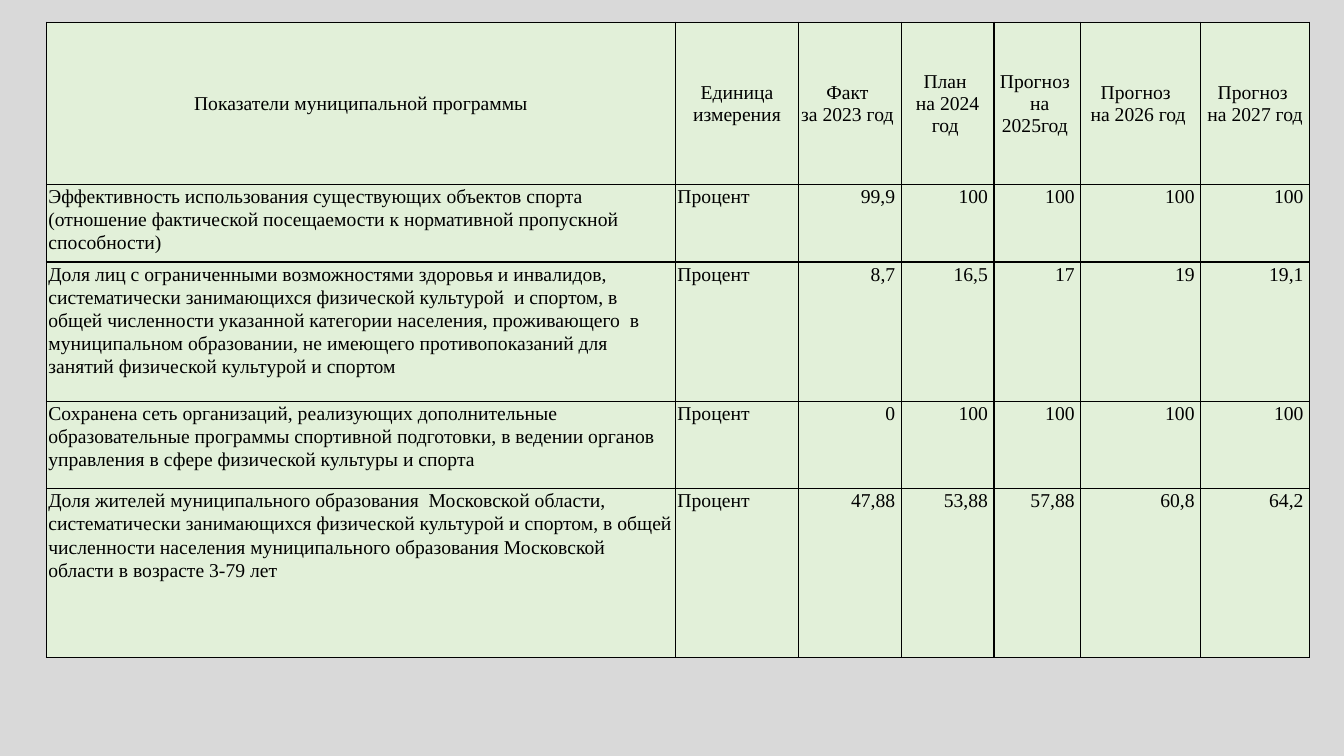
from lxml.etree import SubElement
from pptx import Presentation
from pptx.dml.color import RGBColor
from pptx.enum.text import MSO_ANCHOR, PP_ALIGN
from pptx.oxml.ns import qn
from pptx.util import Inches, Pt

FONT = "Times New Roman"
BACKGROUND, CELL_FILL, INK = "D9D9D9", "E2F0D9", "000000"
COLUMN_WIDTHS = [6.24, 1.22, 1.02, 0.92, 0.86, 1.19, 1.08]
ROW_HEIGHTS = [1.61, 0.77, 1.38, 0.87, 1.67]

HEADINGS = [
    "Показатели муниципальной программы",
    "Единица измерения",
    "Факт \nза 2023 год ",
    "План \nна 2024 год ",
    "Прогноз \n на 2025год ",
    "Прогноз  \nна 2026 год ",
    "Прогноз \n на 2027 год ",
]
INDICATORS = [
    ["Эффективность использования существующих объектов спорта (отношение "
     "фактической посещаемости к нормативной пропускной способности)",
     "Процент", "99,9", "100", "100", "100", "100"],
    ["Доля лиц с ограниченными возможностями здоровья и инвалидов, "
     "систематически занимающихся физической культурой  и спортом, в общей "
     "численности указанной категории населения, проживающего  в муниципальном "
     "образовании, не имеющего противопоказаний для занятий физической "
     "культурой и спортом",
     "Процент", "8,7", "16,5", "17", "19", "19,1"],
    ["Сохранена сеть организаций, реализующих дополнительные образовательные "
     "программы спортивной подготовки, в ведении органов управления в сфере "
     "физической культуры и спорта",
     "Процент", "0", "100", "100", "100", "100"],
    ["Доля жителей муниципального образования  Московской области, "
     "систематически занимающихся физической культурой и спортом, в общей "
     "численности населения муниципального образования Московской области "
     "в возрасте 3-79 лет",
     "Процент", "47,88", "53,88", "57,88", "60,8", "64,2"],
]


def color(value):
    return RGBColor.from_string(value)


def write(frame, text, size=14, align=PP_ALIGN.LEFT, spacing=None):
    frame.word_wrap = True
    for index, line in enumerate(text.split("\n")):
        paragraph = frame.add_paragraph() if index else frame.paragraphs[0]
        paragraph.alignment = align
        paragraph.line_spacing = spacing
        run = paragraph.add_run()
        run.text = line
        run.font.name = FONT
        run.font.size = Pt(size)
        run.font.bold = False
        run.font.color.rgb = color(INK)


def style_cell(cell, left=0, top=0, right=0, anchor=MSO_ANCHOR.TOP):
    cell.margin_left, cell.margin_right = Inches(left), Inches(right)
    cell.margin_top, cell.margin_bottom = Inches(top), 0
    cell.vertical_anchor = anchor
    properties = cell._tc.get_or_add_tcPr()
    for side in ("a:lnL", "a:lnR", "a:lnT", "a:lnB"):
        border = SubElement(properties, qn(side), w=str(Pt(1)))
        SubElement(SubElement(border, qn("a:solidFill")), qn("a:srgbClr"), val=INK)
    cell.fill.solid()
    cell.fill.fore_color.rgb = color(CELL_FILL)


def add_indicator_table(slide, left, top, width, height):
    table = slide.shapes.add_table(
        len(ROW_HEIGHTS), len(COLUMN_WIDTHS),
        Inches(left), Inches(top), Inches(width), Inches(height)).table
    table.first_row = False
    table.horz_banding = False
    for column, share in zip(table.columns, COLUMN_WIDTHS):
        column.width = Inches(width * share / sum(COLUMN_WIDTHS))
    for row, share in zip(table.rows, ROW_HEIGHTS):
        row.height = Inches(height * share / sum(ROW_HEIGHTS))

    for cell, heading in zip(table.rows[0].cells, HEADINGS):
        style_cell(cell, left=0.01, top=0.01, right=0.01, anchor=MSO_ANCHOR.MIDDLE)
        write(cell.text_frame, heading, align=PP_ALIGN.CENTER)

    for row_index, indicator in enumerate(INDICATORS, start=1):
        for column_index, text in enumerate(indicator):
            cell = table.cell(row_index, column_index)
            if column_index < 2:
                style_cell(cell, left=0.02)
                write(cell.text_frame, text, spacing=1.07)
            else:
                style_cell(cell, right=0.06)
                write(cell.text_frame, text, align=PP_ALIGN.RIGHT, spacing=1.07)


def main():
    presentation = Presentation()
    presentation.slide_width = Inches(13.33)
    presentation.slide_height = Inches(7.5)
    slide = presentation.slides.add_slide(presentation.slide_layouts[6])
    slide.background.fill.solid()
    slide.background.fill.fore_color.rgb = color(BACKGROUND)
    add_indicator_table(slide, 0.46, 0.22, 12.53, 6.3)
    presentation.save("out.pptx")


if __name__ == "__main__":
    main()
